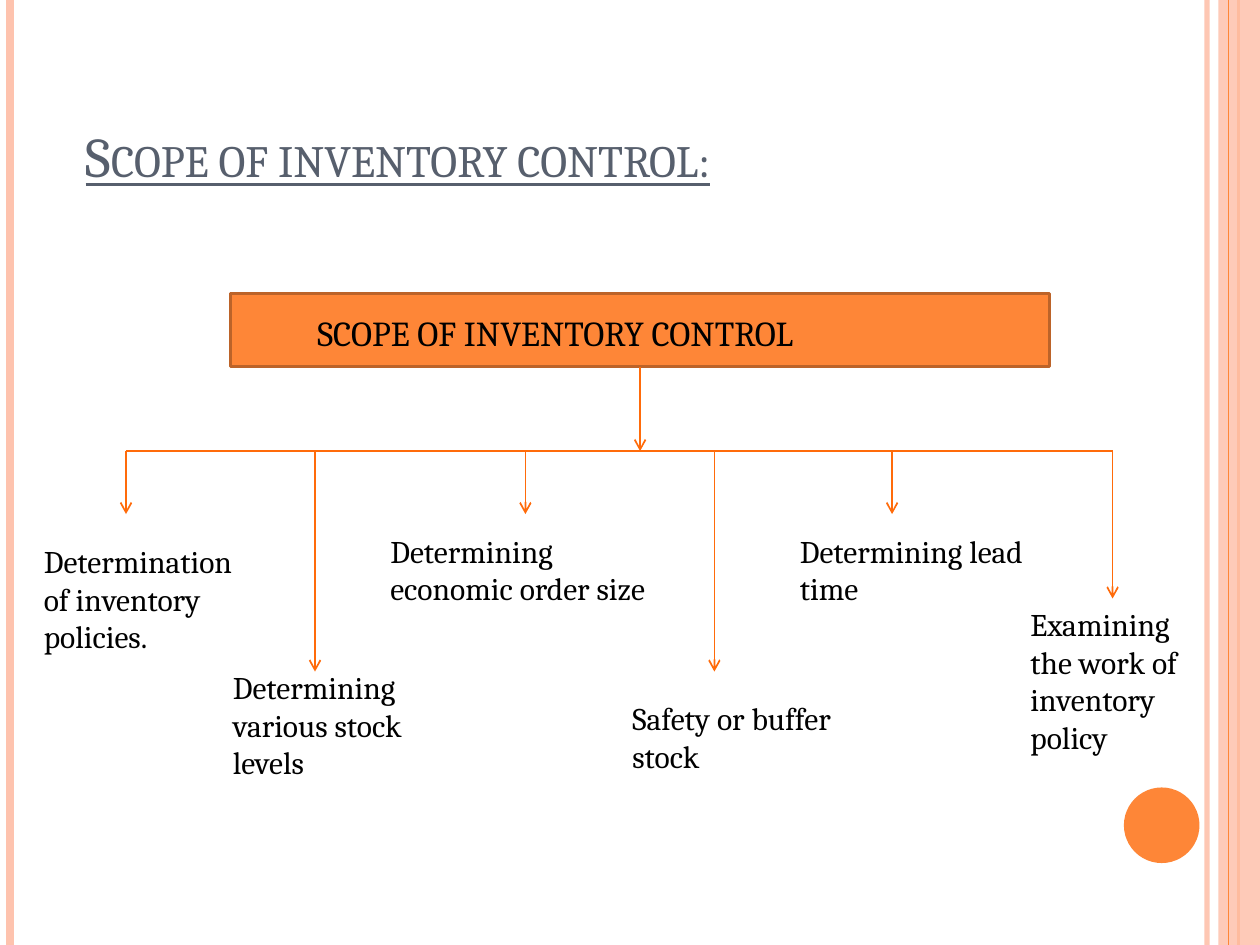
from pptx import Presentation
from pptx.dml.color import RGBColor
from pptx.enum.shapes import MSO_CONNECTOR, MSO_SHAPE
from pptx.enum.text import MSO_ANCHOR, PP_ALIGN
from pptx.oxml.ns import qn
from pptx.util import Inches, Pt
from lxml import etree

LINE = MSO_CONNECTOR.STRAIGHT
RECT, OVAL = MSO_SHAPE.RECTANGLE, MSO_SHAPE.OVAL
LEFT, TOP, BOTTOM = PP_ALIGN.LEFT, MSO_ANCHOR.TOP, MSO_ANCHOR.BOTTOM
FONT = "Cambria"
ORANGE, PEACH, EDGE, ARROW = "FE8637", "FEC3AE", "BC6329", "FF6B0A"
SLATE, BLACK = "575F6D", "000000"
WIDE, HIGH = 10, 7.5

# Content
TITLE = "Scope of inventory control:"
ROOT = "SCOPE OF INVENTORY CONTROL"
# text, box (left, top, width, height), arrow x, arrow end
BRANCHES = [
    ("Determination of inventory policies.", (0.25, 4.25, 1.83, 1.01), 1, 4.08),
    ("Determining various stock levels", (1.75, 5.25, 1.58, 1.01), 2.5, 5.33),
    ("Determining economic order size", (3, 4.17, 2.5, 0.71), 4.17, 4.08),
    ("Safety or buffer stock", (4.92, 5.5, 1.92, 0.71), 5.67, 5.33),
    ("Determining lead time", (6.25, 4.17, 2, 0.71), 7.08, 4.08),
    ("Examining the work of inventory policy", (8.08, 4.75, 1.58, 1.31), 8.83, 4.75),
]
# x, colour, points, opacity
RAILS = [(9.58, PEACH, 3, 93), (0.08, PEACH, 4.5, 100), (9.83, ORANGE, 1.5, 100)]
ROOT_BOX = (1.83, 2.33, 6.5, 0.58)
BAR = 3.58

deck = Presentation()
deck.slide_width, deck.slide_height = Inches(WIDE), Inches(HIGH)
slide = deck.slides.add_slide(deck.slide_layouts[5])
shapes = slide.shapes


def rgb(code):
    return RGBColor.from_string(code)


def inches(box):
    return [Inches(v) for v in box]


def fade(fill, share):
    if share < 100:
        tone = fill._xPr.find(".//" + qn("a:srgbClr"))
        etree.SubElement(tone, qn("a:alpha"), val=str(share * 1000))


def rule(x1, y1, x2, y2, tone, size, share=100, head=False):
    wire = shapes.add_connector(LINE, *inches((x1, y1, x2, y2)))
    wire.line.width = Pt(size)
    wire.line.fill.solid()
    wire.line.fill.fore_color.rgb = rgb(tone)
    fade(wire.line.fill, share)
    if head:
        etree.SubElement(wire.line._ln, qn("a:tailEnd"), type="arrow")
    etree.SubElement(wire._element.spPr, qn("a:effectLst"))


def block(kind, box, tone, edge=None, share=100):
    form = shapes.add_shape(kind, *inches(box))
    form.shadow.inherit = False
    form.fill.solid()
    form.fill.fore_color.rgb = rgb(tone)
    fade(form.fill, share)
    if edge:
        form.line.color.rgb = rgb(edge)
        form.line.width = Pt(2)
    else:
        form.line.fill.background()


def write(frame, text, size, tone, anchor=TOP):
    frame.word_wrap = True
    frame.vertical_anchor = anchor
    para = frame.paragraphs[0]
    para.alignment = LEFT
    run = para.add_run()
    run.text = text
    run.font.name, run.font.size = FONT, Pt(size)
    run.font.color.rgb = rgb(tone)
    return run


def label(text, box, size):
    write(shapes.add_textbox(*inches(box)).text_frame, text, size, BLACK)


# Side rails, band and disc
for x, tone, size, share in RAILS:
    rule(x, 0, x, HIGH, tone, size, share)
block(RECT, (9.67, 0, 0.33, HIGH), PEACH, share=87)
rule(9.75, 0, 9.75, HIGH, ORANGE, 0.75)
block(OVAL, (8.92, 6.25, 0.6, 0.6), ORANGE)

# Title
title = shapes.title
title.left, title.top, title.width, title.height = inches((0.58, 0.3, 8.17, 1.25))
head = write(title.text_frame, TITLE, 32, SLATE, BOTTOM)
head.font.underline = True
head.font._element.set("cap", "small")

# Root box, stem and bar
block(RECT, ROOT_BOX, ORANGE, EDGE)
label(ROOT, (2.42, 2.42, 6.08, 0.44), 20)
left, top, width, height = ROOT_BOX
mid = left + width / 2
rule(mid, top + height, mid, BAR, ARROW, 1, head=True)
rule(BRANCHES[0][2], BAR, BRANCHES[-1][2], BAR, ARROW, 1)

# Branches
for text, box, x, end in BRANCHES:
    rule(x, BAR, x, end, ARROW, 1, head=True)
    label(text, box, 18)

deck.save("out.pptx")
